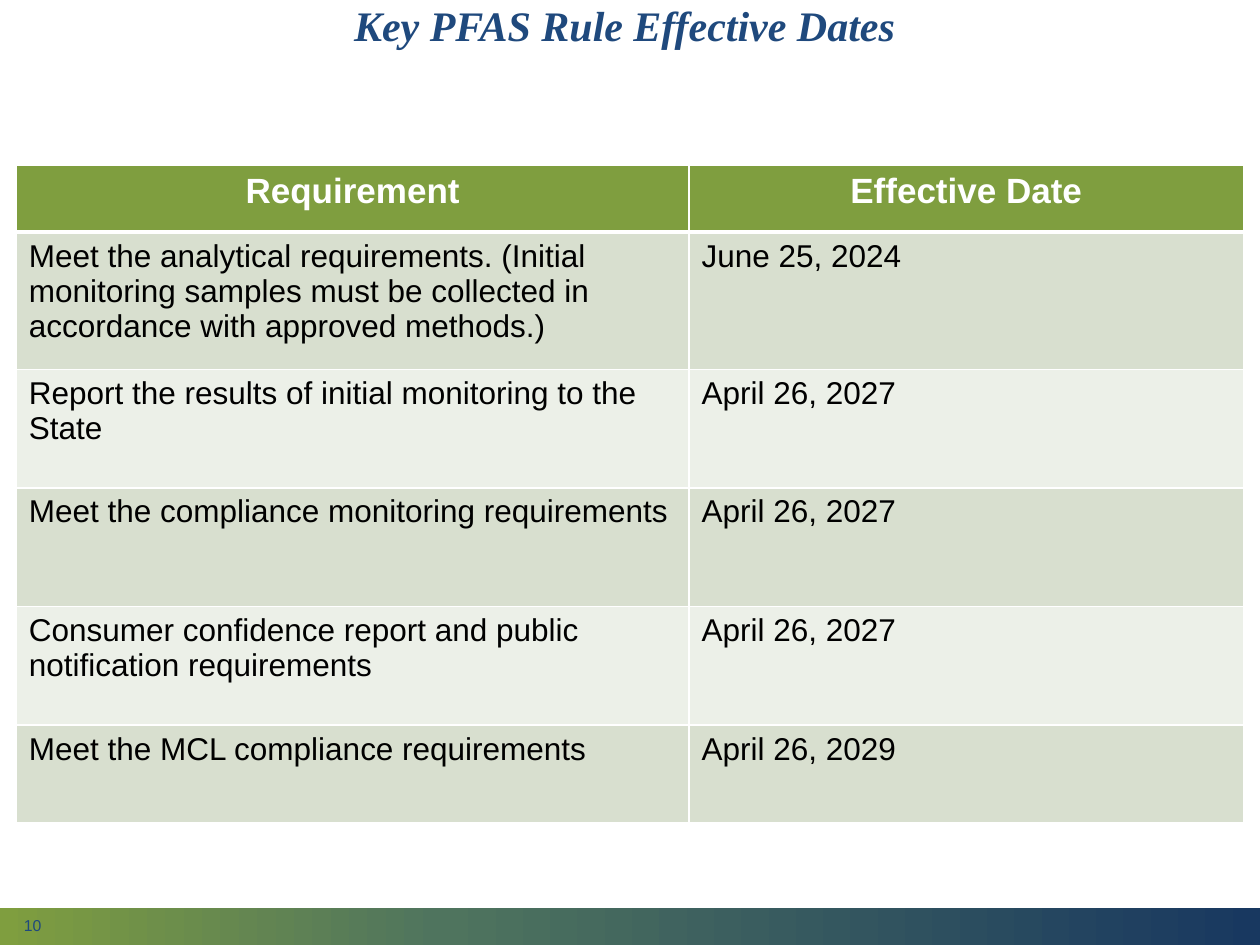
from copy import deepcopy

from lxml.etree import SubElement
from pptx import Presentation
from pptx.dml.color import RGBColor
from pptx.enum.shapes import MSO_SHAPE as SHAPE
from pptx.enum.text import MSO_ANCHOR as ANCHOR, PP_ALIGN as ALIGN
from pptx.oxml.ns import qn
from pptx.util import Cm, Pt

WHITE = RGBColor(0xFF, 0xFF, 0xFF)
BLACK = RGBColor(0x00, 0x00, 0x00)
BLUE = RGBColor(0x1F, 0x49, 0x7D)
NAVY = RGBColor(0x18, 0x38, 0x60)
GREEN = RGBColor(0x7F, 0x9E, 0x3F)
TEAL = RGBColor(0x4F, 0x74, 0x5E)
BAND_DARK = RGBColor(0xD8, 0xDF, 0xCF)
BAND_LIGHT = RGBColor(0xEC, 0xF0, 0xE8)

ROWS = [
    ("Requirement", "Effective Date"),
    ("Meet the analytical requirements. (Initial monitoring samples must be "
     "collected in accordance with approved methods.)", "June 25, 2024"),
    ("Report the results of initial monitoring to the State", "April 26, 2027"),
    ("Meet the compliance monitoring requirements", "April 26, 2027"),
    ("Consumer confidence report and public notification requirements",
     "April 26, 2027"),
    ("Meet the MCL compliance requirements", "April 26, 2029"),
]
COL_WIDTHS = [13.56, 11.18]
ROW_HEIGHTS = [1.35, 2.77, 2.39, 2.39, 2.39, 1.96]


class Deck:
    """Holds the text style and the current slide."""
    body_font = "Arial"
    title_font = "Times New Roman"

    def __init__(self, prs):
        self.s = prs.slides.add_slide(prs.slide_layouts[6])

    def style(self, p, size, color, font=None, bold=False, italic=False):
        for r in p.runs:
            f = r.font
            f.name, f.size = font or self.body_font, Pt(size)
            f.bold, f.italic = bold, italic
            f.color.rgb = color

    def text(self, text, x, y, w, h, size, color, align=ALIGN.LEFT, **look):
        tf = self.s.shapes.add_textbox(Cm(x), Cm(y), Cm(w), Cm(h)).text_frame
        tf.word_wrap = True
        tf.vertical_anchor = ANCHOR.MIDDLE
        tf.text = text
        p = tf.paragraphs[0]
        p.alignment = align
        self.style(p, size, color, **look)
        return p

    def gradient_bar(self, x, y, w, h, stops):
        sp = self.s.shapes.add_shape(SHAPE.RECTANGLE, Cm(x), Cm(y), Cm(w), Cm(h))
        sp.shadow.inherit = False
        sp.line.fill.background()
        sp.fill.gradient()
        sp.fill.gradient_angle = 0
        # The default gradient has two stops; add the rest
        stop_list = sp.fill._fill._gradFill.find(qn("a:gsLst"))
        while len(stop_list) < len(stops):
            stop_list.append(deepcopy(stop_list[0]))
        for stop, (position, color) in zip(sp.fill.gradient_stops, stops):
            stop.position = position
            stop.color.rgb = color

    def border(self, cell, side, width):
        ln = SubElement(cell._tc.get_or_add_tcPr(), qn(f"a:ln{side}"),
                        w=str(Pt(width)))
        fill = SubElement(ln, qn("a:solidFill"))
        SubElement(fill, qn("a:srgbClr"), val=str(WHITE))

    def table(self, rows, x, y, widths, heights):
        tbl = self.s.shapes.add_table(
            len(rows), len(widths), Cm(x), Cm(y),
            Cm(sum(widths)), Cm(sum(heights))).table
        for column, width in zip(tbl.columns, widths):
            column.width = Cm(width)
        for i, (row, height) in enumerate(zip(rows, heights)):
            tbl.rows[i].height = Cm(height)
            for j, text in enumerate(row):
                self.cell(tbl.cell(i, j), text, i)

    def cell(self, cell, text, row):
        header = row == 0
        # Borders: a heavier rule between the header and the body
        for side in "LRTB":
            heavy = (row, side) in ((0, "B"), (1, "T"))
            self.border(cell, side, 3 if heavy else 1)
        cell.fill.solid()
        band = BAND_DARK if row % 2 else BAND_LIGHT
        cell.fill.fore_color.rgb = GREEN if header else band
        cell.text_frame.text = text
        p = cell.text_frame.paragraphs[0]
        p.alignment = ALIGN.CENTER if header else ALIGN.LEFT
        self.style(p, 20 if header else 18, WHITE if header else BLACK,
                   bold=header)


def main():
    prs = Presentation()
    prs.slide_width, prs.slide_height = Cm(25.4), Cm(19.05)
    deck = Deck(prs)

    # Footer band
    deck.gradient_bar(0, 18.3, 25.4, 0.75, [(0, GREEN), (0.35, TEAL), (1, NAVY)])

    # Title
    p = deck.text("Key PFAS Rule Effective Dates ", 0.76, -0.28, 23.88, 1.7,
                  24, BLUE, ALIGN.CENTER, font=deck.title_font,
                  bold=True, italic=True)
    p.line_spacing = 0.9

    # Page number
    deck.text("10", 0.23, 18.47, 5.72, 0.38, 9, BLUE)

    # Effective dates
    deck.table(ROWS, 0.33, 3.33, COL_WIDTHS, ROW_HEIGHTS)

    prs.save("out.pptx")


if __name__ == "__main__":
    main()
